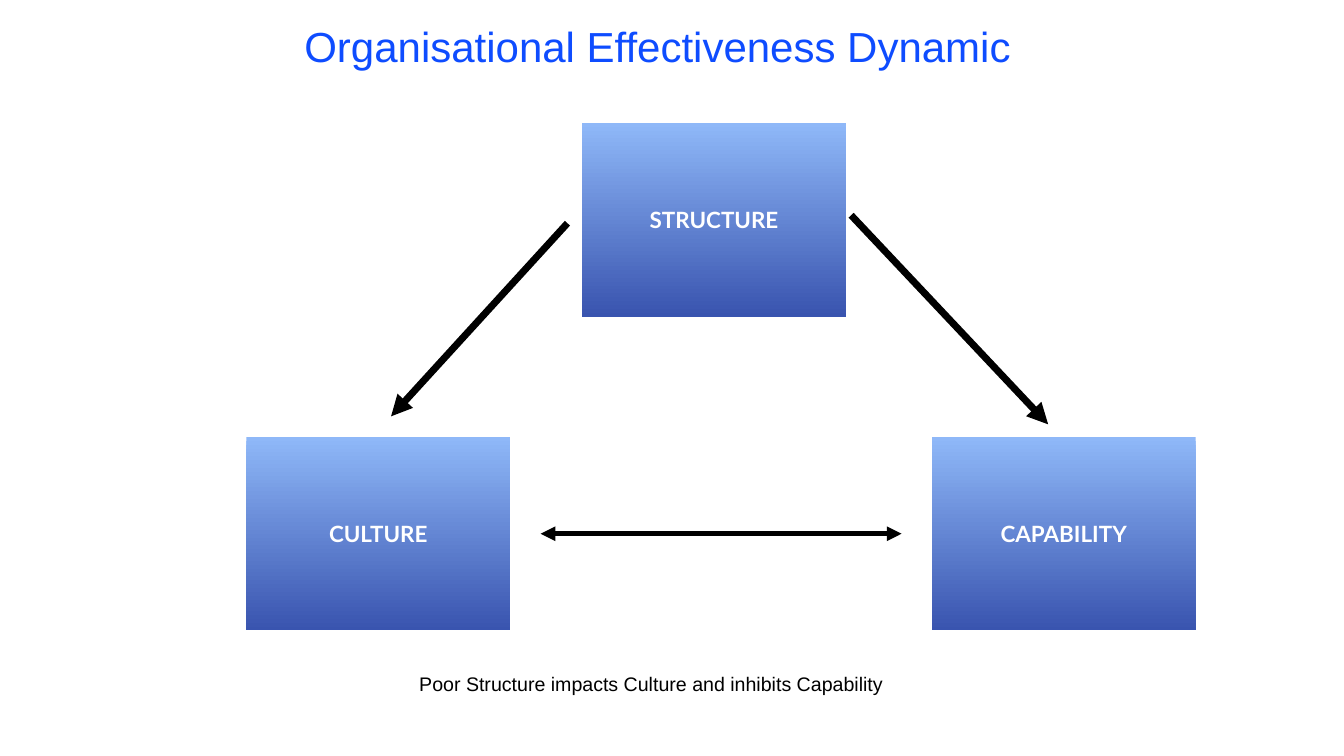
from lxml import etree
from pptx import Presentation
from pptx.dml.color import RGBColor
from pptx.enum.shapes import MSO_CONNECTOR as CONN, MSO_SHAPE as SHAPE
from pptx.enum.text import MSO_ANCHOR as ANCHOR, MSO_AUTO_SIZE as AUTO, PP_ALIGN as ALIGN
from pptx.oxml.ns import qn
from pptx.util import Inches, Pt

prs = Presentation()
prs.slide_width, prs.slide_height = Inches(26.67), Inches(15)
slide = prs.slides.add_slide(prs.slide_layouts[6])


def share(*percents):
    """Turn alternating x, y percentages of the slide into lengths."""
    sides = (prs.slide_width, prs.slide_height)
    return [round(p / 100 * sides[i % 2]) for i, p in enumerate(percents)]


def add_text(shapes, text, area, size, font, color, bold=False, align=ALIGN.LEFT, spacing=0.9):
    sp = shapes.add_textbox(*share(*area))
    tf = sp.text_frame
    tf.text = text
    tf.word_wrap = True
    tf.auto_size = AUTO.SHAPE_TO_FIT_TEXT
    tf.vertical_anchor = ANCHOR.MIDDLE
    tf.margin_left = tf.margin_right = tf.margin_top = tf.margin_bottom = Inches(0.06)
    p = tf.paragraphs[0]
    p.alignment = align
    p.line_spacing = spacing
    r = p.runs[0]
    r.font.size, r.font.name, r.font.bold = Pt(size), font, bold
    r.font.color.rgb = RGBColor.from_string(color)


# Boxes: left and top as percentages of the slide
BOX_W, BOX_H, LABEL_H = 19.64, 25.6, 4.6
TOP_ROW, BOTTOM_ROW = 16.27, 57.8
for label, left, top in [
    ("CULTURE", 18.33, BOTTOM_ROW),
    ("STRUCTURE", 43.31, TOP_ROW),
    ("CAPABILITY", 69.33, BOTTOM_ROW),
]:
    group = slide.shapes.add_group_shape()
    sp = group.shapes.add_shape(SHAPE.RECTANGLE, *share(left, top, BOX_W, BOX_H))
    sp.shadow.inherit = False
    sp.line.fill.background()
    sp.fill.gradient()
    sp.fill.gradient_angle = 270
    for stop, position, color in zip(sp.fill.gradient_stops, (0, 1), ("8FB8F8", "3954AF")):
        stop.position = position
        stop.color.rgb = RGBColor.from_string(color)
    label_top = top + (BOX_H - LABEL_H) / 2
    add_text(group.shapes, label, (left, label_top, BOX_W, LABEL_H),
             32, "Lato", "FFFFFF", bold=True, align=ALIGN.CENTER, spacing=1.0)

# Arrows: start and end points, line width, ends that carry a head
for points, width, ends in [
    ((42.22, 29.53, 29.1, 55.07), 10, ["tailEnd"]),
    ((63.33, 28.47, 77.99, 56.13), 10, ["tailEnd"]),
    ((40.23, 70.6, 67.08, 70.6), 7, ["headEnd", "tailEnd"]),
]:
    arrow = slide.shapes.add_connector(CONN.STRAIGHT, *share(*points))
    arrow.line.width = Pt(width)
    arrow.line.color.rgb = RGBColor.from_string("000000")
    ln = arrow.line._get_or_add_ln()
    for end in ends:
        etree.SubElement(ln, qn(f"a:{end}"), type="triangle")
    etree.SubElement(arrow._element.spPr, qn("a:effectLst"))

add_text(slide.shapes, "Organisational Effectiveness Dynamic",
         (22.42, 1.93, 58.61, 9.13), 60, "Arial", "0E4CFF")
add_text(slide.shapes, "Poor Structure impacts Culture and inhibits Capability",
         (30.97, 88.3, 39.45, 4.6), 28, "Arial", "000000")

prs.save("out.pptx")
